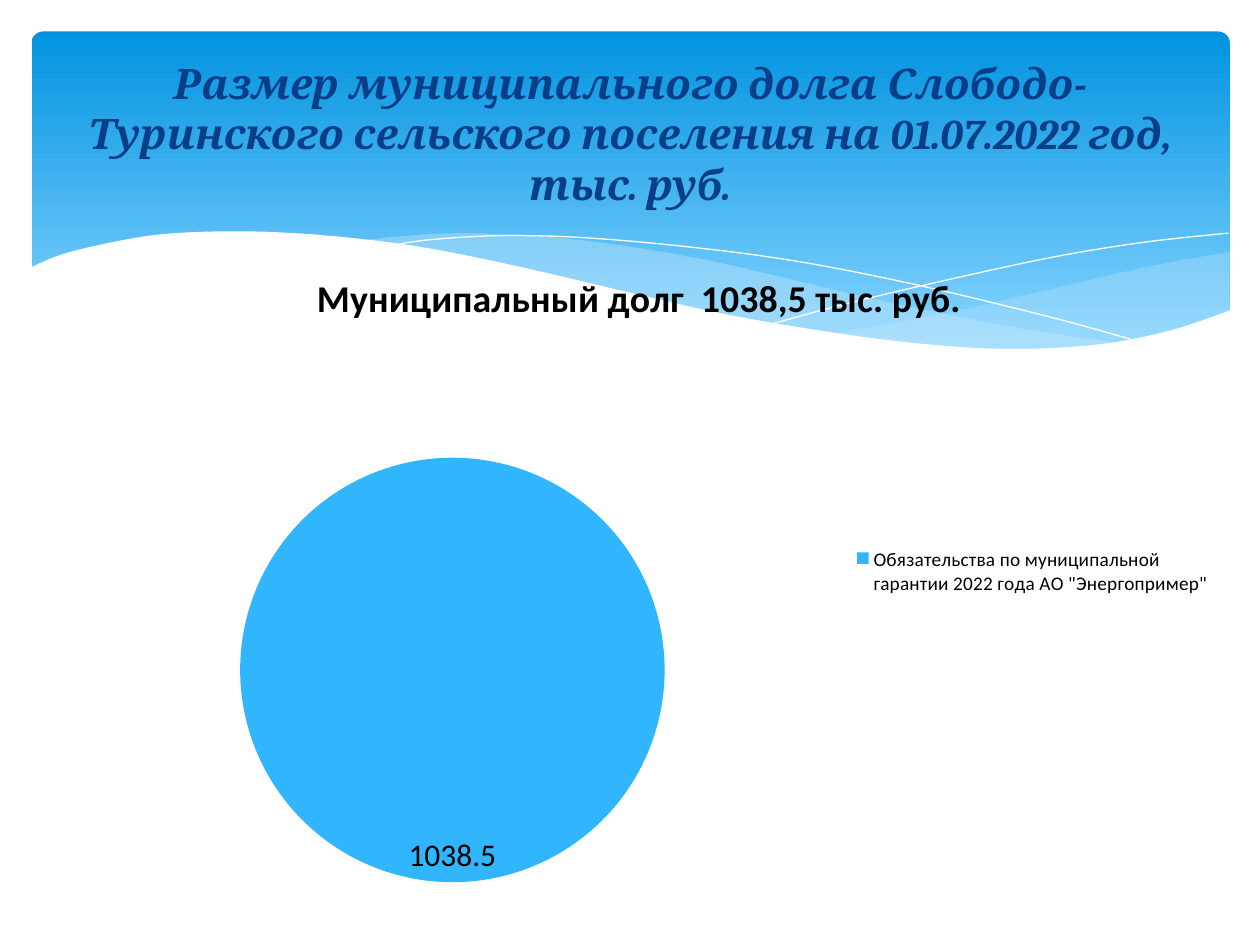
from lxml.etree import SubElement
from pptx import Presentation
from pptx.chart.data import CategoryChartData
from pptx.dml.color import RGBColor
from pptx.enum.chart import XL_CHART_TYPE, XL_LABEL_POSITION, XL_LEGEND_POSITION
from pptx.enum.shapes import MSO_SHAPE
from pptx.enum.text import MSO_ANCHOR, PP_ALIGN
from pptx.oxml.ns import qn
from pptx.util import Inches, Pt

COLORS = {
    "sky_top": "0293E0", "sky_bottom": "83D3FE", "haze": "C6E7FC",
    "white": "FFFFFF", "title": "073E87", "debt": "31B6FD", "text": "000000",
}

# Knots of the wave edges, in inches
RIGHT_HAZE_TOP = [(9.76, 2), (9.35, 2.07), (8.91, 2.16), (8.32, 2.3), (7.53, 2.48), (6.61, 2.65)]
RIGHT_HAZE_BOTTOM = [(6.61, 2.65), (7.19, 2.72), (7.69, 2.77), (8.14, 2.78), (8.63, 2.75),
                     (9.05, 2.69), (9.42, 2.59), (9.76, 2.47)]
MIDDLE_HAZE_TOP = [(8.93, 2.73), (8.07, 2.6), (7.06, 2.4), (6.29, 2.22), (5.69, 2.08),
                   (5.14, 1.98), (4.65, 1.91), (4.2, 1.87), (3.61, 1.85), (3.13, 1.88), (2.86, 1.91)]
MIDDLE_HAZE_BOTTOM = [(2.86, 1.91), (3.62, 2.03), (4.49, 2.22), (5.3, 2.4), (6.01, 2.55),
                      (6.8, 2.68), (7.48, 2.76), (8.07, 2.78), (8.48, 2.77), (8.93, 2.73)]
FALLING_LINE = [(3.09, 1.95), (3.44, 1.9), (4.01, 1.87), (4.69, 1.89), (5.56, 1.97),
                (6.36, 2.08), (7.27, 2.26), (8.31, 2.51), (9.07, 2.72)]
RISING_LINE = [(6.13, 2.57), (6.72, 2.41), (7.48, 2.23), (8.36, 2.04), (9.1, 1.92), (9.75, 1.85)]
WHITE_EDGE = [(9.77, 2.46), (9.3, 2.62), (8.75, 2.73), (8.09, 2.77), (7.44, 2.74), (6.68, 2.65),
              (5.79, 2.5), (5.03, 2.33), (4.18, 2.13), (3.4, 1.97), (2.71, 1.88), (2.11, 1.84),
              (1.61, 1.84), (1.19, 1.87), (0.76, 1.95), (0.46, 2.03), (0.23, 2.13)]


def smooth_curve(knots, steps=5):
    """Return points of a Catmull-Rom curve through the knots."""
    padded = [knots[0], *knots, knots[-1]]
    points = [knots[0]]
    for a, b, c, d in zip(padded, padded[1:], padded[2:], padded[3:]):
        for step in range(1, steps + 1):
            t = step / steps
            points.append(tuple(
                0.5 * (2 * q + (r - p) * t + (2 * p - 5 * q + 4 * r - s) * t ** 2
                       + (3 * q - p - 3 * r + s) * t ** 3)
                for p, q, r, s in zip(a, b, c, d)))
    return points


class SlideBuilder:
    def __init__(self, slide):
        self.slide = slide
        self.shapes = slide.shapes

    def color(self, name):
        return RGBColor.from_string(COLORS[name])

    def style_font(self, font, size, color="text", name="Calibri", bold=False, italic=False):
        font.size, font.name, font.bold, font.italic = Pt(size), name, bold, italic
        font.color.rgb = self.color(color)

    def sky(self, left, top, width, height):
        sky = self.shapes.add_shape(MSO_SHAPE.ROUNDED_RECTANGLE, Inches(left), Inches(top),
                                    Inches(width), Inches(height))
        sky.adjustments[0] = 0.034
        sky.shadow.inherit = False
        sky.line.fill.background()
        sky.fill.gradient()
        sky.fill.gradient_angle = 270
        for stop, name, position in zip(sky.fill.gradient_stops, ("sky_top", "sky_bottom"), (0, 0.9)):
            stop.color.rgb = self.color(name)
            stop.position = position

    def outline(self, points, close):
        corners = [(Inches(x), Inches(y)) for x, y in points]
        builder = self.shapes.build_freeform(*corners[0])
        builder.add_line_segments(corners[1:], close=close)
        shape = builder.convert_to_shape()
        shape.shadow.inherit = False
        return shape

    def wave(self, points, color, opacity=100):
        wave = self.outline(points, close=True)
        wave.line.fill.background()
        wave.fill.solid()
        wave.fill.fore_color.rgb = self.color(color)
        if opacity < 100:
            srgb = wave.fill._xPr.find(".//" + qn("a:srgbClr"))
            SubElement(srgb, qn("a:alpha")).set("val", str(opacity * 1000))

    def hairline(self, knots):
        hairline = self.outline(smooth_curve(knots), close=False)
        hairline.fill.background()
        hairline.line.color.rgb = self.color("white")
        hairline.line.width = Pt(0)

    def pie(self, title, values, left, top, width, height):
        data = CategoryChartData()
        data.categories = list(values)
        data.add_series("Series 1", list(values.values()))
        chart = self.shapes.add_chart(XL_CHART_TYPE.PIE, Inches(left), Inches(top),
                                      Inches(width), Inches(height), data).chart
        self.style_font(chart.font, 18)
        chart.has_title = True
        heading = chart.chart_title.text_frame
        heading.text = title
        self.style_font(heading.paragraphs[0].runs[0].font, 21.6, bold=True)
        chart.has_legend = True
        chart.legend.position = XL_LEGEND_POSITION.RIGHT
        chart.legend.include_in_layout = False
        self.style_font(chart.legend.font, 11)

        plot = chart.plots[0]
        plot.vary_by_categories = True
        series = plot.series[0]
        slice_fill = series.points[0].format.fill
        slice_fill.solid()
        slice_fill.fore_color.rgb = self.color("debt")
        explosion = series._element.makeelement(qn("c:explosion"), {"val": "25"})
        series._element.find(qn("c:dPt")).addprevious(explosion)
        labels = series.data_labels
        labels.show_value = True
        labels.position = XL_LABEL_POSITION.INSIDE_END
        self.style_font(labels.font, 18)

    def title(self, text, left, top, width, height):
        title = self.shapes.title
        title.left, title.top = Inches(left), Inches(top)
        title.width, title.height = Inches(width), Inches(height)
        frame = title.text_frame
        frame.text = text
        frame.word_wrap = True
        frame.vertical_anchor = MSO_ANCHOR.MIDDLE
        frame.paragraphs[0].alignment = PP_ALIGN.CENTER
        self.style_font(frame.paragraphs[0].runs[0].font, 24, "title", "Cambria", True, True)
        self.shapes._spTree.append(title._element)  # bring in front of the backdrop


def main():
    presentation = Presentation()
    presentation.slide_width, presentation.slide_height = Inches(10), Inches(7.5)
    title_only = presentation.slide_layouts[5]
    builder = SlideBuilder(presentation.slides.add_slide(title_only))

    builder.sky(0.25, 0.25, 9.51, 2.7)
    builder.wave(smooth_curve(RIGHT_HAZE_TOP) + smooth_curve(RIGHT_HAZE_BOTTOM), "haze", 29)
    builder.wave(smooth_curve(MIDDLE_HAZE_TOP) + smooth_curve(MIDDLE_HAZE_BOTTOM), "haze", 40)
    builder.hairline(FALLING_LINE)
    builder.hairline(RISING_LINE)
    builder.wave(smooth_curve(WHITE_EDGE) + [(0.23, 3.29), (9.77, 3.29)], "white")

    builder.pie("Муниципальный долг  1038,5 тыс. руб.",
                {'Обязательства по муниципальной гарантии 2022 года АО "Энергопример"': 1038.5},
                0.43, 1.94, 9.29, 5.2)
    builder.title("Размер муниципального долга Слободо-Туринского сельского поселения "
                  "на 01.07.2022 год, тыс. руб.", 0.5, 0.37, 9, 1.37)
    presentation.save("out.pptx")


if __name__ == "__main__":
    main()
